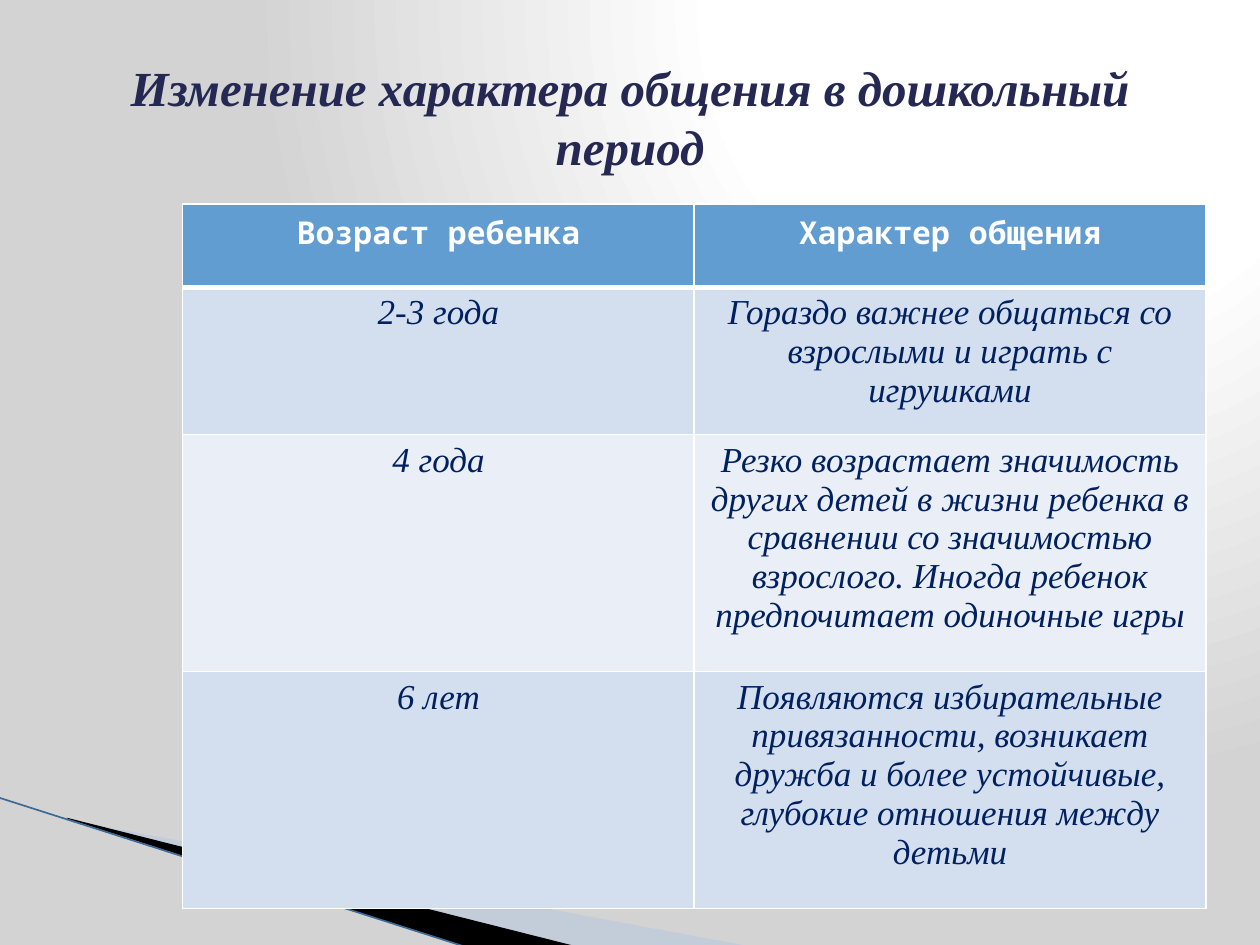
"""Build a slide with a table on how children's communication changes with age."""
from pptx import Presentation, util as u
from pptx.dml.color import RGBColor
from pptx.enum import shapes, text
from pptx.oxml import parse_xml
from pptx.oxml.ns import nsdecls, qn
from lxml import etree

TITLE = "Изменение характера общения в дошкольный период"
ROWS = [
    ("Возраст ребенка", "Характер общения"),
    ("2-3 года", "Гораздо важнее общаться со взрослыми и играть с игрушками"),
    ("4 года", "Резко возрастает значимость других детей в жизни ребенка в сравнении "
               "со значимостью взрослого. Иногда ребенок предпочитает одиночные игры"),
    ("6 лет", "Появляются избирательные привязанности, возникает дружба и более "
              "устойчивые, глубокие отношения между детьми"),
]
NAVY = RGBColor(0x24, 0x28, 0x52)
INK = RGBColor(0x00, 0x20, 0x60)
WHITE = RGBColor(0xFF, 0xFF, 0xFF)
BLACK = RGBColor(0x00, 0x00, 0x00)
BLUE = RGBColor(0x62, 0x9D, 0xD1)
PALE = RGBColor(0xD3, 0xDF, 0xEE)
MIST = RGBColor(0xEA, 0xEF, 0xF7)
SKY = RGBColor(0xAB, 0xC6, 0xE6)
EDGE = RGBColor(0x3C, 0x6A, 0x96)
GREY = RGBColor(0xD3, 0xD3, 0xD3)

WIDE, HIGH = 10, 7.5
LEFT, TOP, COL = 1.45, 1.62, 4.06
TALL = [0.66, 1.17, 1.88, 1.88]
FILLS = [BLUE, PALE, MIST, PALE]
STOPS = [(0, WHITE), (40, WHITE), (100, GREY)]
WEDGES = [
    ([(0.55, 6.51), (5.95, 7.51), (4.56, 7.51), (0.55, 6.5)], SKY, 40),
    ([(0.53, 6.49), (4.57, 7.51), (3.72, 7.52), (0.54, 6.5)], BLACK, 100),
]
SERIF = dict(name="Times New Roman", italic=True)
HEAD = dict(name="Noto Sans Mono", size=u.Pt(18), bold=True)
BODY = dict(SERIF, size=u.Pt(20), bold=False)
MAIN = dict(SERIF, size=u.Pt(28), bold=True)


def write(frame, words, form, color):
    para = frame.paragraphs[0]
    para.alignment = text.PP_ALIGN.CENTER
    run = para.add_run()
    run.text = words
    for key, value in form.items():
        setattr(run.font, key, value)
    run.font.color.rgb = color


def paint(slide):
    slide.background.fill.gradient()
    old = slide.background._cSld.find(".//" + qn("a:gradFill"))
    stops = "".join(f'<a:gs pos="{pos * 1000}"><a:srgbClr val="{color}"/></a:gs>'
                    for pos, color in STOPS)
    old.getparent().replace(old, parse_xml(
        f'<a:gradFill {nsdecls("a")} rotWithShape="1"><a:gsLst>{stops}</a:gsLst>'
        '<a:path path="circle"><a:fillToRect l="65000" b="98000"/></a:path></a:gradFill>'))


def wedge(slide, points, color, alpha):
    first, *rest = [(u.Inches(x), u.Inches(y)) for x, y in points]
    form = slide.shapes.build_freeform(*first)
    form.add_line_segments(rest, close=True)
    shape = form.convert_to_shape()
    shape.shadow.inherit = False
    shape.fill.solid()
    shape.fill.fore_color.rgb = color
    shape.line.fill.background()
    tint = shape.fill._xPr.find(".//" + qn("a:srgbClr"))
    etree.SubElement(tint, qn("a:alpha"), val=str(alpha * 1000))


def border(cell, bottom):
    props = cell._tc.get_or_add_tcPr()
    sides = dict(lnL=1, lnR=1, lnT=1, lnB=bottom)
    for spot, (side, width) in enumerate(sides.items()):
        props.insert(spot, parse_xml(
            f'<a:{side} {nsdecls("a")} w="{u.Pt(width)}"><a:solidFill>'
            f'<a:srgbClr val="{WHITE}"/></a:solidFill></a:{side}>'))


def grid(slide):
    size = [u.Inches(n) for n in (LEFT, TOP, COL * 2, sum(TALL))]
    table = slide.shapes.add_table(len(ROWS), 2, *size).table
    for col in table.columns:
        col.width = u.Inches(COL)
    for r, words in enumerate(ROWS):
        table.rows[r].height = u.Inches(TALL[r])
        form, ink = (BODY, INK) if r else (HEAD, WHITE)
        for c, word in enumerate(words):
            cell = table.cell(r, c)
            cell.fill.solid()
            cell.fill.fore_color.rgb = FILLS[r]
            border(cell, 1 if r else 3)
            write(cell.text_frame, word, form, ink)


def main():
    deck = Presentation()
    deck.slide_width, deck.slide_height = u.Inches(WIDE), u.Inches(HIGH)
    slide = deck.slides.add_slide(deck.slide_layouts[5])
    paint(slide)
    for points, color, alpha in WEDGES:
        wedge(slide, points, color, alpha)
    line = slide.shapes.add_connector(
        shapes.MSO_CONNECTOR.STRAIGHT, *[u.Inches(n) for n in (-0.01, 6.33, 3.71, 7.52)])
    line.line.color.rgb, line.line.width = EDGE, u.Pt(0.95)
    etree.SubElement(line._element.spPr, qn("a:effectLst"))
    grid(slide)
    title = slide.shapes.title
    place = dict(left=0.5, top=0.3, width=9, height=1.25)
    for key, value in place.items():
        setattr(title, key, u.Inches(value))
    title.text_frame.vertical_anchor = text.MSO_ANCHOR.MIDDLE
    write(title.text_frame, TITLE, MAIN, NAVY)
    deck.save("out.pptx")


if __name__ == "__main__":
    main()
